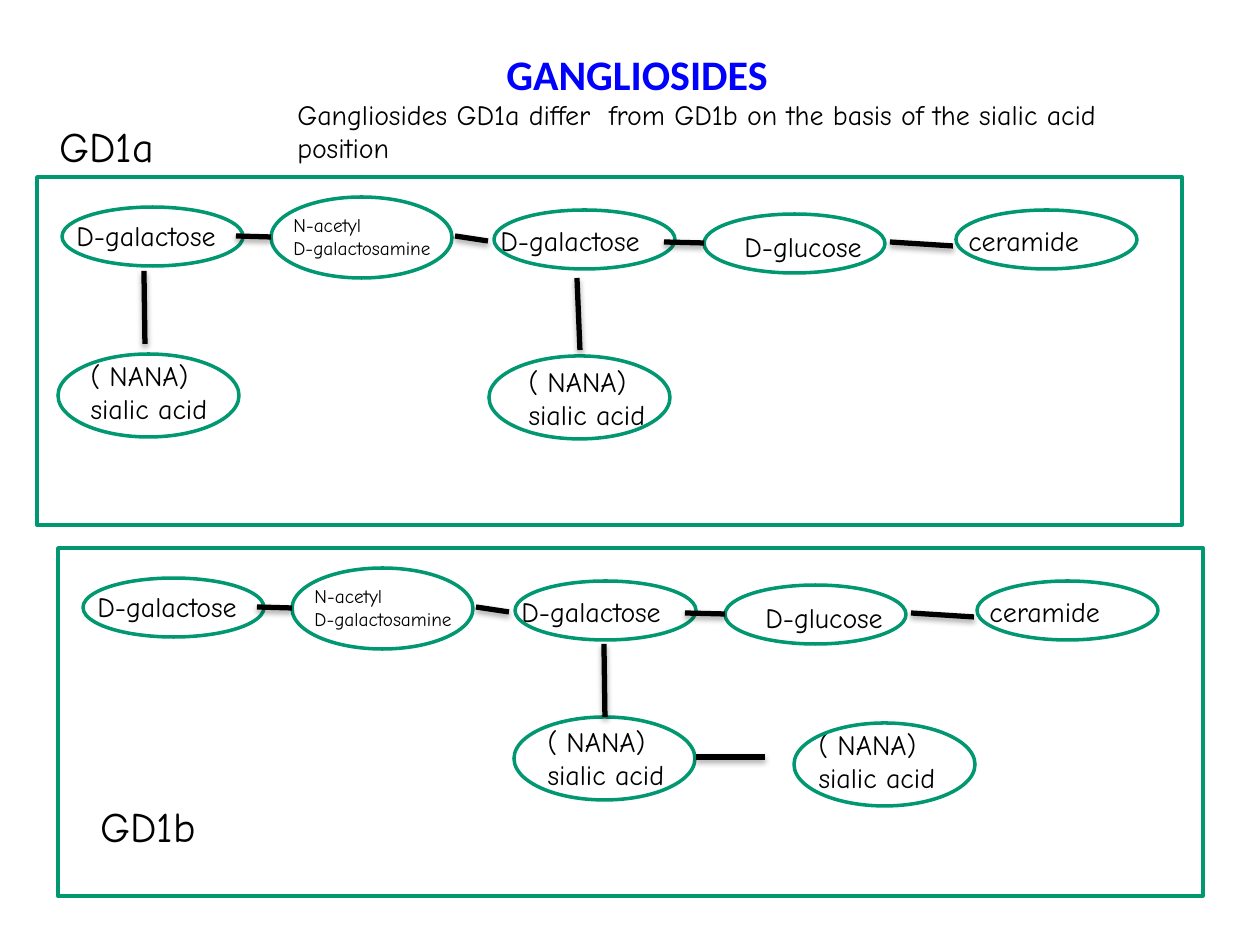
from lxml import etree
from pptx import Presentation
from pptx import util as u
from pptx.dml.color import RGBColor
from pptx.enum import shapes, text
from pptx.oxml.ns import qn

PX = 914400 // 126
BLACK = RGBColor(0x00, 0x00, 0x00)
WHITE = RGBColor(0xFF, 0xFF, 0xFF)
BLUE = RGBColor(0x00, 0x00, 0xFF)
GREEN = RGBColor(0x00, 0x97, 0x71)
HAND_FONT = "Comic Neue"
OVAL_WIDTH = 181

# Sugar chain shared by both gangliosides: label, size, label box, oval box
CHAIN = [
    (["D-galactose"], 16, (64, 212, 181, 81), (62, 207, OVAL_WIDTH, 59)),
    (["N-acetyl", "D-galactosamine"], 11, (281, 207, 224, 59), (271, 197, OVAL_WIDTH, 81)),
    (["D-galactose"], 16, (488, 217, 181, 47), (494, 210, OVAL_WIDTH, 59)),
    (["D-glucose"], 16, (732, 223, 154, 47), (704, 214, OVAL_WIDTH, 59)),
    (["ceramide"], 16, (956, 217, 280, 47), (956, 210, OVAL_WIDTH, 59)),
]
CHAIN_BONDS = [
    (236, 236, 271, 237),
    (455, 236, 488, 241),
    (664, 242, 704, 243),
    (890, 242, 953, 246),
]
FRAME = (37, 177, 1145, 348)


def px(*lengths):
    return [length * PX for length in lengths]


def shift(box, dx, dy):
    left, top, width, height = box
    return left + dx, top + dy, width, height


def write(shape, lines, size, color=BLACK, font=HAND_FONT, bold=False, indent=0):
    frame = shape.text_frame
    frame.word_wrap = True
    frame.vertical_anchor = text.MSO_ANCHOR.TOP
    frame.margin_left = u.Inches(0.1) + indent * PX
    for number, line in enumerate(lines):
        para = frame.add_paragraph() if number else frame.paragraphs[0]
        para.alignment = text.PP_ALIGN.LEFT
        span = para.add_run()
        span.text = line
        span.font.size = u.Pt(size)
        span.font.name = font
        span.font.bold = bold
        span.font.color.rgb = color


def add_heading(parent, box, line, size, **style):
    write(parent.shapes.add_textbox(*px(*box)), [line], size, **style)


def add_label(parent, box, lines, size, indent=0):
    label = parent.shapes.add_shape(shapes.MSO_SHAPE.RECTANGLE, *px(*box))
    label.shadow.inherit = False
    label.fill.solid()
    label.fill.fore_color.rgb = WHITE
    label.line.fill.background()
    write(label, lines, size, indent=indent)


def add_outline(parent, kind, box):
    outline = parent.shapes.add_shape(kind, *px(*box))
    outline.shadow.inherit = False
    outline.fill.background()
    outline.line.color.rgb = GREEN
    outline.line.width = u.Pt(2)


def add_bond(parent, ends):
    bond = parent.shapes.add_connector(shapes.MSO_CONNECTOR.STRAIGHT, *px(*ends))
    bond.line.color.rgb = BLACK
    bond.line.width = u.Pt(3)
    # Soft shadow straight below the line
    effects = etree.SubElement(bond._element.spPr, qn("a:effectLst"))
    shadow = etree.SubElement(effects, qn("a:outerShdw"), blurRad="40000",
                              dist="23000", dir="5400000", rotWithShape="0")
    color = etree.SubElement(shadow, qn("a:srgbClr"), val="000000")
    etree.SubElement(color, qn("a:alpha"), val="35000")


def add_ganglioside(page, dx, dy, acids, acid_bonds, name, name_box):
    group = page.shapes.add_group_shape()
    # Chain of sugars
    for lines, size, label_box, _ in CHAIN:
        add_label(group, shift(label_box, dx, dy), lines, size)
    for _, _, _, oval_box in CHAIN:
        add_outline(group, shapes.MSO_SHAPE.OVAL, shift(oval_box, dx, dy))
    # Sialic acids: label corner, oval corner
    for label_corner, oval_corner in acids:
        add_label(group, (*label_corner, 304, 81), ["( NANA)", "sialic acid"], 16, indent=47)
        add_outline(group, shapes.MSO_SHAPE.OVAL, (*oval_corner, OVAL_WIDTH, 83))
    # Bonds
    for x1, y1, x2, y2 in CHAIN_BONDS:
        add_bond(group, (x1 + dx, y1 + dy, x2 + dx, y2 + dy))
    for ends in acid_bonds:
        add_bond(group, ends)
    # Name and frame
    add_heading(group, name_box, name, 24)
    add_outline(group, shapes.MSO_SHAPE.RECTANGLE, shift(FRAME, dx, dy))


def main():
    deck = Presentation()
    deck.slide_width, deck.slide_height = u.Inches(10), u.Inches(7.5)
    page = deck.slides.add_slide(deck.slide_layouts[6])

    # Title and statement
    add_heading(page, (494, 42, 290, 63), "GANGLIOSIDES", 24,
                color=BLUE, font="Calibri", bold=True)
    add_label(page, (285, 91, 898, 81),
              ["Gangliosides GD1a differ  from GD1b on the basis of the sialic acid position"], 16)

    # The two gangliosides
    add_ganglioside(page, 0, 0,
                    [((469, 358), (489, 356)), ((31, 352), (58, 354))],
                    [(577, 278, 580, 350), (144, 271, 145, 344)],
                    "GD1a", (47, 114, 630, 63))
    add_ganglioside(page, 21, 371,
                    [((488, 718), (514, 717)), ((759, 721), (794, 723))],
                    [(604, 644, 605, 717), (696, 757, 765, 757)],
                    "GD1b", (88, 794, 630, 63))

    deck.save("out.pptx")


if __name__ == "__main__":
    main()
